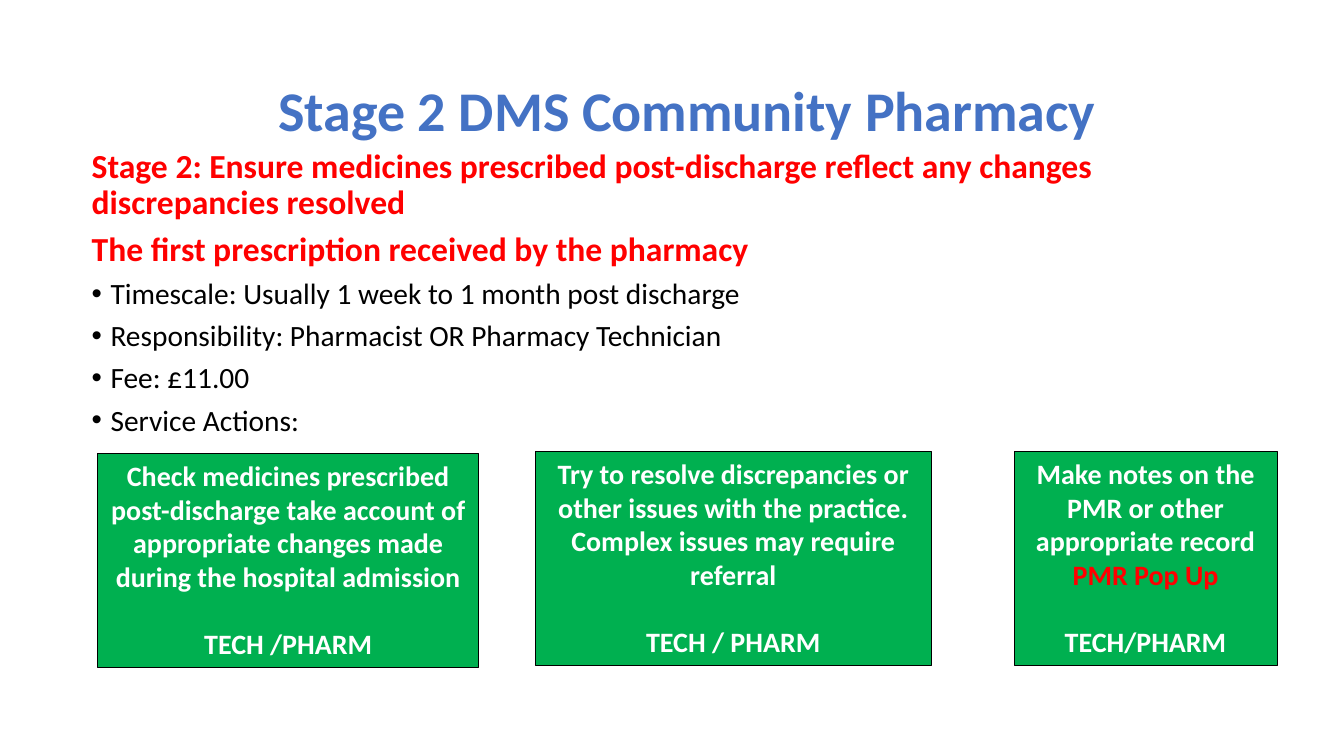
from lxml import etree
from pptx import Presentation
from pptx.dml.color import RGBColor
from pptx.enum import shapes, text
from pptx.oxml import ns
from pptx.util import Pt

COLORS = {"title": "4472C4", "alert": "FF0000", "body": "000000",
          "box": "00B050", "box_text": "FFFFFF", "box_line": "000000"}
FONT = "Calibri"
INDENT = 13.5

HEADINGS = [
    "Stage 2: Ensure medicines prescribed post-discharge reflect any changes discrepancies resolved",
    "The first prescription received by the pharmacy",
]
DETAILS = [
    "Timescale: Usually 1 week to 1 month post discharge",
    "Responsibility: Pharmacist OR Pharmacy Technician",
    "Fee: £11.00",
    "Service Actions:",
]
# Each action: box, runs of (wording, colour), staff who may do it
ACTIONS = [
    ((69.8, 324, 272.2, 152.6),
     [("Check medicines prescribed post-discharge take account of appropriate "
       "changes made during the hospital admission", "box_text")],
     "TECH /PHARM"),
    ((382.3, 322.6, 283, 152.6),
     [("Try to resolve discrepancies or other issues with the practice. "
       "Complex issues may require referral", "box_text")],
     "TECH / PHARM"),
    ((724.3, 322.6, 187.9, 152.6),
     [("Make notes on the PMR or other appropriate record ", "box_text"),
      ("PMR Pop Up", "alert")],
     "TECH/PHARM"),
]


def rgb(name):
    return RGBColor.from_string(COLORS[name])


def set_all(target, **values):
    for name, value in values.items():
        setattr(target, name, value)


def add_run(p, wording, size, color, bold=True):
    r = p.add_run()
    r.text = wording
    set_all(r.font, name=FONT, size=Pt(size), bold=bold)
    r.font.color.rgb = rgb(color)


def add_bullet(p):
    pPr = p._p.get_or_add_pPr()
    pPr.set("marL", str(Pt(INDENT)))
    pPr.set("indent", str(-Pt(INDENT)))
    etree.SubElement(pPr, ns.qn("a:buFont")).set("typeface", "Arial")
    etree.SubElement(pPr, ns.qn("a:buChar")).set("char", "•")


def next_paragraph(tf, index):
    return tf.add_paragraph() if index else tf.paragraphs[0]


def fill_title(s, left, top, width, height):
    sp = s.shapes.title
    set_all(sp, left=Pt(left), top=Pt(top), width=Pt(width), height=Pt(height))
    tf = sp.text_frame
    set_all(tf, word_wrap=True, auto_size=text.MSO_AUTO_SIZE.NONE,
            vertical_anchor=text.MSO_ANCHOR.MIDDLE)
    p = tf.paragraphs[0]
    set_all(p, alignment=text.PP_ALIGN.CENTER, line_spacing=0.9)
    add_run(p, "Stage 2 DMS Community Pharmacy", 40, "title")


def add_summary(s, left, top, width, height):
    """Red headings followed by the bulleted service details."""
    tf = s.shapes.add_textbox(Pt(left), Pt(top), Pt(width), Pt(height)).text_frame
    tf.word_wrap = True
    for i, wording in enumerate(HEADINGS + DETAILS):
        p = next_paragraph(tf, i)
        set_all(p, line_spacing=0.9, space_before=Pt(7.5 if i else 0))
        if i < len(HEADINGS):
            add_run(p, wording, 24, "alert")
        else:
            add_bullet(p)
            add_run(p, wording, 21, "body", bold=False)


def add_action(s, box, runs, staff):
    sp = s.shapes.add_shape(shapes.MSO_SHAPE.RECTANGLE, *map(Pt, box))
    sp.shadow.inherit = False
    sp.fill.solid()
    sp.fill.fore_color.rgb = rgb("box")
    sp.line.color.rgb = rgb("box_line")
    sp.line.width = Pt(0.75)
    tf = sp.text_frame
    set_all(tf, word_wrap=True, vertical_anchor=text.MSO_ANCHOR.TOP)
    for i, parts in enumerate([runs, [(staff, "box_text")]]):
        p = next_paragraph(tf, i)
        set_all(p, alignment=text.PP_ALIGN.CENTER, space_before=Pt(24 * i))
        for wording, color in parts:
            add_run(p, wording, 20, color)


def main():
    prs = Presentation()
    set_all(prs, slide_width=Pt(960), slide_height=Pt(540))
    s = prs.slides.add_slide(prs.slide_layouts[5])
    fill_title(s, 114.5, 28.8, 752.4, 104.4)
    add_summary(s, 58.4, 103, 843, 360)
    for action in ACTIONS:
        add_action(s, *action)
    prs.save("out.pptx")


if __name__ == "__main__":
    main()
